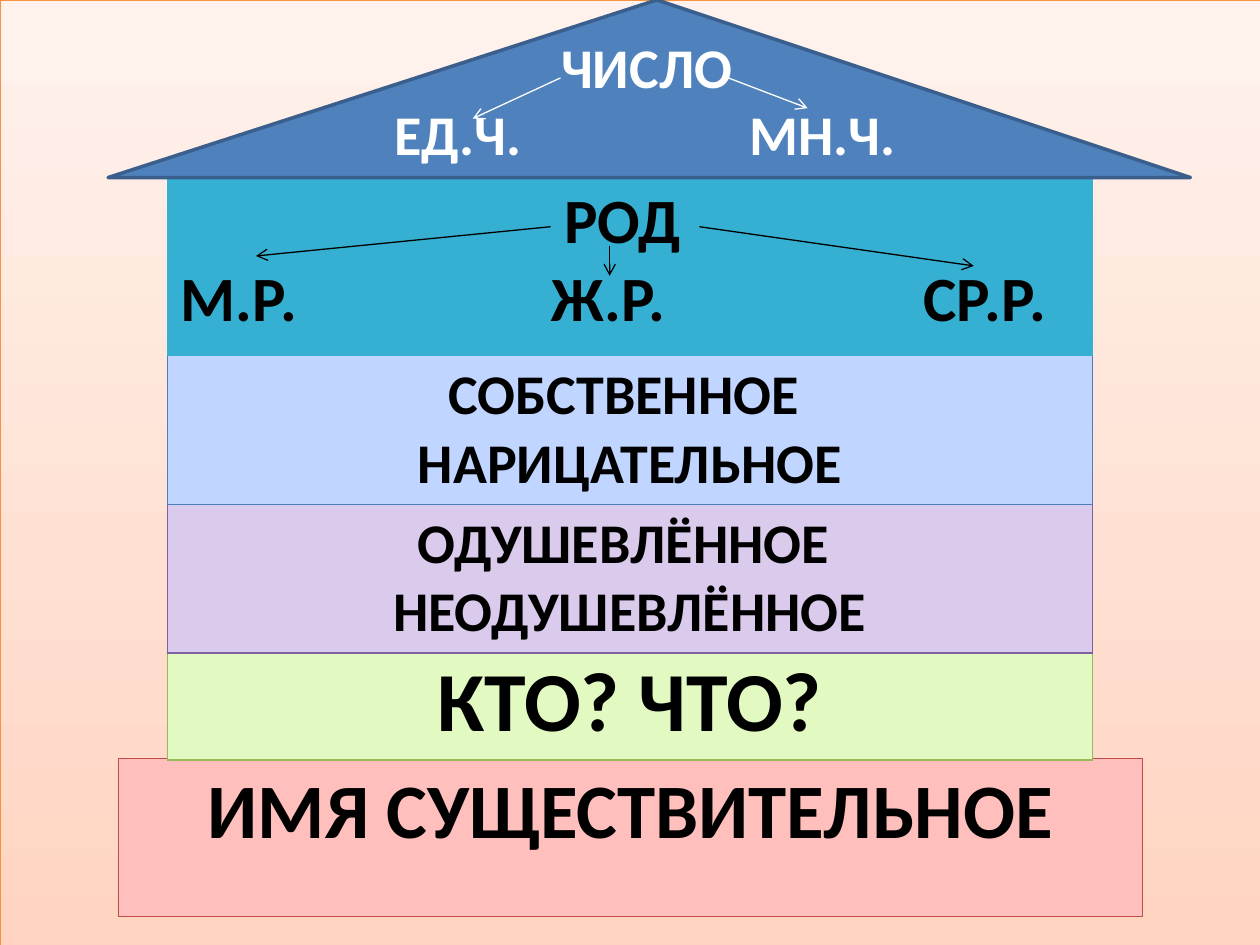
from dataclasses import dataclass

from lxml import etree
from pptx import Presentation
from pptx.dml.color import RGBColor
from pptx.enum.shapes import MSO_CONNECTOR, MSO_SHAPE
from pptx.enum.text import MSO_ANCHOR, PP_ALIGN
from pptx.oxml.ns import qn
from pptx.util import Cm, Pt

CENTER, LEFT = PP_ALIGN.CENTER, PP_ALIGN.LEFT
MIDDLE = MSO_ANCHOR.MIDDLE
RECTANGLE, TRIANGLE = MSO_SHAPE.RECTANGLE, MSO_SHAPE.ISOSCELES_TRIANGLE
STRAIGHT = MSO_CONNECTOR.STRAIGHT


@dataclass(frozen=True)
class Theme:
    font: str = "Calibri"
    black: str = "000000"
    white: str = "FFFFFF"
    backdrop: tuple = ("FFD2BD", "FFF2ED", "F69240")  # bottom, top, line
    foundation: tuple = ("FFBFBD", "BF4C48")  # fill, line
    question: tuple = ("E2FAC2", "98B955")
    animacy: tuple = ("DACAEC", "7D60A0")
    naming: tuple = ("C0D5FF", "4B7EBC")
    gender: tuple = ("36B0D2", "36B0D2")
    roof: tuple = ("4F81BD", "3A5F8C")
    foundation_size: int = 44
    question_size: int = 48
    gender_size: int = 36
    body_size: int = 32
    thin: float = 0.75
    thick: float = 2


THEME = Theme()


def rgb(value):
    return RGBColor.from_string(value)


def write_lines(text_frame, lines, size, color):
    """Centre each line; a line with tabs is set from the left."""
    text_frame.text = "\n".join(lines)
    for paragraph in text_frame.paragraphs:
        paragraph.alignment = LEFT if "\t" in paragraph.text else CENTER
        for run in paragraph.runs:
            run.font.name = THEME.font
            run.font.size = Pt(size)
            run.font.bold = True
            run.font.color.rgb = rgb(color)


def set_tab_stops(paragraph, positions):
    properties = paragraph._p.get_or_add_pPr()
    tab_list = etree.SubElement(properties, qn("a:tabLst"))
    for position in positions:
        etree.SubElement(tab_list, qn("a:tab"), pos=str(Cm(position)), algn="l")


def set_borders(cell, color):
    properties = cell._tc.get_or_add_tcPr()
    for side in ("lnL", "lnR", "lnT", "lnB"):
        line = etree.SubElement(properties, qn(f"a:{side}"), w=str(Pt(THEME.thin)))
        fill = etree.SubElement(line, qn("a:solidFill"))
        etree.SubElement(fill, qn("a:srgbClr"), val=color)


def add_arrows(slide, box, arrows, color):
    """Draw arrows given as (x1, y1, x2, y2) from the corner of the box."""
    left, top = box[:2]
    for x1, y1, x2, y2 in arrows:
        arrow = slide.shapes.add_connector(
            STRAIGHT, Cm(left + x1), Cm(top + y1), Cm(left + x2), Cm(top + y2))
        arrow.line.color.rgb = rgb(color)
        arrow.line.width = Pt(THEME.thin)
        etree.SubElement(arrow.line._get_or_add_ln(), qn("a:tailEnd"), type="arrow")
        etree.SubElement(arrow._element.spPr, qn("a:effectLst"))


def add_backdrop(slide, box):
    bottom, top, line = THEME.backdrop
    shape = slide.shapes.add_shape(RECTANGLE, *map(Cm, box))
    shape.shadow.inherit = False
    shape.fill.gradient()
    shape.fill.gradient_angle = 90
    for stop, color in zip(shape.fill.gradient_stops, (bottom, top)):
        stop.color.rgb = rgb(color)
    shape.line.color.rgb = rgb(line)
    shape.line.width = Pt(THEME.thin)


def add_floor(slide, box, lines, size, colors):
    fill, border = colors
    table = slide.shapes.add_table(1, 1, *map(Cm, box)).table
    cell = table.cell(0, 0)
    set_borders(cell, border)
    cell.fill.solid()
    cell.fill.fore_color.rgb = rgb(fill)
    write_lines(cell.text_frame, lines, size, THEME.black)
    return cell


def add_gender_floor(slide, box):
    cell = add_floor(slide, box, ["РОД ", "М.Р.\tЖ.Р.\tСР.Р."],
                     THEME.gender_size, THEME.gender)
    set_tab_stops(cell.text_frame.paragraphs[1], (7.49, 14.98))
    add_arrows(slide, box, [(7.72, 0.99, 1.78, 1.58),
                            (8.91, 1.37, 8.91, 1.98),
                            (10.72, 0.99, 16.25, 1.78)], THEME.black)


def add_roof(slide, box):
    fill, line = THEME.roof
    roof = slide.shapes.add_shape(TRIANGLE, *map(Cm, box))
    roof.adjustments[0] = 0.507
    roof.shadow.inherit = False
    roof.fill.solid()
    roof.fill.fore_color.rgb = rgb(fill)
    roof.line.color.rgb = rgb(line)
    roof.line.width = Pt(THEME.thick)
    text_frame = roof.text_frame
    text_frame.word_wrap = True
    text_frame.vertical_anchor = MIDDLE
    text_frame.margin_bottom = Cm(1.48)
    write_lines(text_frame, ["ЧИСЛО ", "ЕД.Ч.\tМН.Ч."], THEME.body_size, THEME.white)
    set_tab_stops(text_frame.paragraphs[1], (7.15,))
    add_arrows(slide, box, [(9.12, 1.57, 7.35, 2.39),
                            (12.5, 1.57, 14.1, 2.18)], THEME.white)


def add_house(slide, left, width):
    """Stack the house from the foundation up to the roof."""
    add_floor(slide, (left - 0.99, 15.29, width + 2.01, 3.18),
              ["ИМЯ СУЩЕСТВИТЕЛЬНОЕ"], THEME.foundation_size, THEME.foundation)
    add_floor(slide, (left, 13, width, 2.29),
              ["КТО? ЧТО?"], THEME.question_size, THEME.question)
    add_floor(slide, (left, 10.15, width, 2.97),
              ["ОДУШЕВЛЁННОЕ ", "НЕОДУШЕВЛЁННОЕ"], THEME.body_size, THEME.animacy)
    add_floor(slide, (left, 7.16, width, 2.97),
              ["СОБСТВЕННОЕ ", "НАРИЦАТЕЛЬНОЕ"], THEME.body_size, THEME.naming)
    add_gender_floor(slide, (left, 3.58, width, 3.58))
    add_roof(slide, (left - 1.2, 0, width + 3.18, 3.58))


def main():
    presentation = Presentation()
    presentation.slide_width, presentation.slide_height = Cm(25.4), Cm(19.05)
    slide = presentation.slides.add_slide(presentation.slide_layouts[6])
    add_backdrop(slide, (0, 0, 26.8, 20.65))
    add_house(slide, left=3.38, width=18.64)
    presentation.save("out.pptx")


if __name__ == "__main__":
    main()
